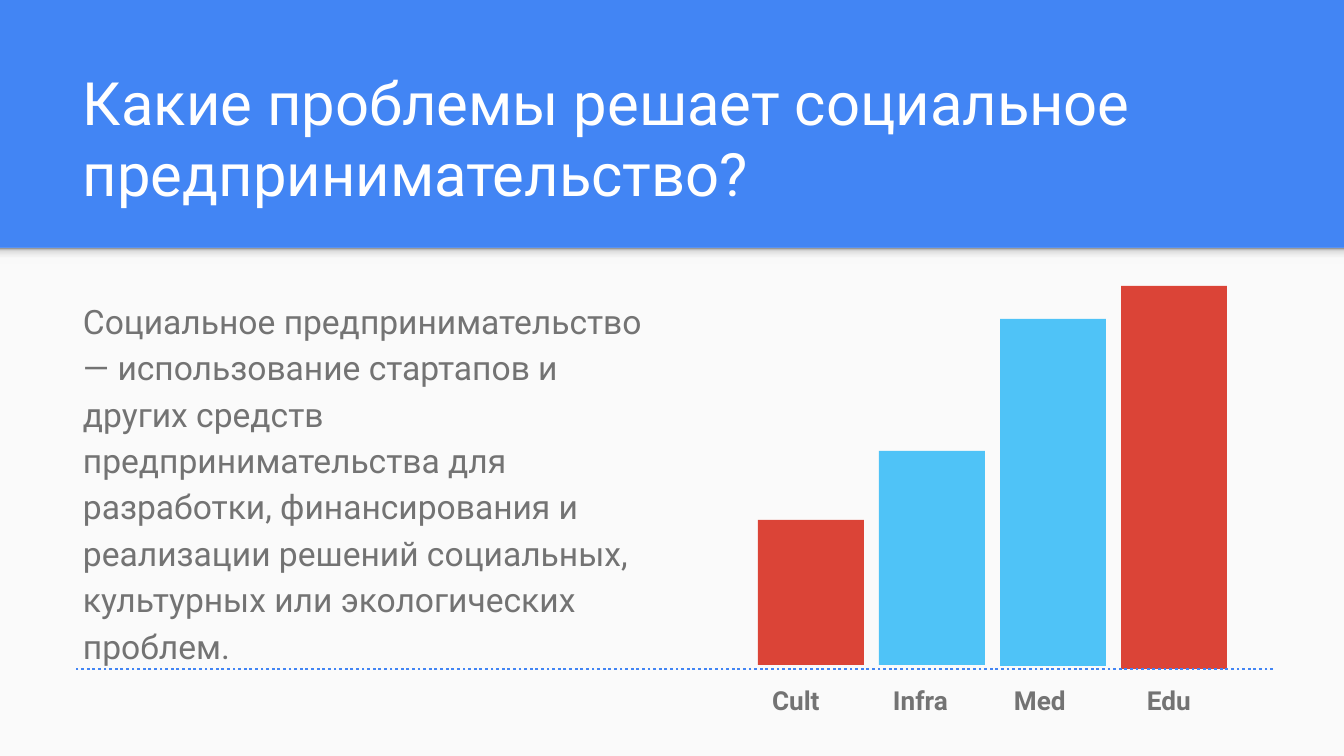
from copy import deepcopy

from pptx import Presentation
from pptx import util as u
from pptx.dml.color import RGBColor
from pptx.enum import dml, shapes, text
from pptx.oxml.ns import qn
from pptx.oxml.xmlchemy import OxmlElement

PX = 914400 / 134.4
NO_STYLE = "{2D5ABB26-0587-4C30-8999-92F81FD0307C}"
BLUE, RED, SKY = "4285F4", "DB4437", "4FC3F7"
WHITE, PAPER, GREY = "FFFFFF", "FAFAFA", "737373"


def px(*lengths):
    return [u.Emu(round(length * PX)) for length in lengths]


def rgb(value):
    return RGBColor.from_string(value)


class Deck:
    """Holds the font and the current slide, and draws each kind of element."""

    font = "Roboto"
    inset = 13

    def __init__(self, background):
        self.presentation = Presentation()
        self.presentation.slide_width, self.presentation.slide_height = px(1344, 756)
        self.slide = self.presentation.slides.add_slide(self.presentation.slide_layouts[6])
        fill = self.slide.background.fill
        fill.solid()
        fill.fore_color.rgb = rgb(background)

    def style(self, paragraph, size, color, bold=False, spacing=1.0):
        paragraph.font.name = self.font
        paragraph.font.size = u.Pt(size)
        paragraph.font.bold = bold
        paragraph.font.color.rgb = rgb(color)
        paragraph.line_spacing = spacing

    def box(self, *place, color=None):
        rectangle = self.slide.shapes.add_shape(shapes.MSO_SHAPE.RECTANGLE, *px(*place))
        rectangle.shadow.inherit = False
        rectangle.line.fill.background()
        if color:
            rectangle.fill.solid()
            rectangle.fill.fore_color.rgb = rgb(color)
        return rectangle

    def fade(self, *place, stops):
        fill = self.box(*place).fill
        fill.gradient()
        fill.gradient_angle = 90
        first = fill.gradient_stops[0]._gs
        for _ in stops[2:]:
            first.addnext(deepcopy(first))
        for stop, (position, color) in zip(fill.gradient_stops, stops):
            stop.position = position
            stop.color.rgb = rgb(color)

    def words(self, content, *place, size, color, spacing=1.0, anchor=text.MSO_ANCHOR.TOP):
        frame = self.slide.shapes.add_textbox(*px(*place)).text_frame
        frame.word_wrap = True
        frame.vertical_anchor = anchor
        frame.margin_left, frame.margin_top, frame.margin_right, frame.margin_bottom = px(*[self.inset] * 4)
        frame.text = content
        self.style(frame.paragraphs[0], size, color, spacing=spacing)

    def labels(self, names, indents, *place):
        table = self.slide.shapes.add_table(1, len(names), *px(*place)).table
        table.first_row = table.horz_banding = False
        table._tbl.tblPr.find(qn("a:tableStyleId")).text = NO_STYLE
        for cell, name, indent in zip(table.rows[0].cells, names, indents):
            cell.fill.background()
            cell.margin_left, cell.margin_top, cell.margin_right, cell.margin_bottom = px(
                self.inset + indent, self.inset, 0, self.inset)
            cell.text = name
            self.style(cell.text_frame.paragraphs[0], 14, GREY, bold=True, spacing=1.15)

    def dotted(self, *ends, color):
        rule = self.slide.shapes.add_connector(shapes.MSO_CONNECTOR.STRAIGHT, *px(*ends))
        rule.line.color.rgb = rgb(color)
        rule.line.width = u.Pt(1.5)
        rule.line.dash_style = dml.MSO_LINE.ROUND_DOT
        rule._element.spPr.append(OxmlElement("a:effectLst"))


def main():
    deck = Deck(BLUE)
    deck.box(0, 248, 1344, 508, color=PAPER)
    deck.fade(0, 248, 1344, 16,
              stops=[(0, "F9F9F9"), (0.36, "F9F9F9"), (0.8, "DEDEDE"), (1, "999999")])
    deck.words("Какие проблемы решает социальное предпринимательство?",
               70, 109, 1208, 113, size=32, color=WHITE, anchor=text.MSO_ANCHOR.BOTTOM)
    deck.words("Социальное предпринимательство — использование стартапов и других средств "
               "предпринимательства для разработки, финансирования и реализации решений "
               "социальных, культурных или экологических проблем.",
               70, 282, 587, 398, size=18, color=GREY, spacing=1.15)

    step = 121
    deck.labels(["Cult", "Infra", "Med", "Edu"], [13, 13, 13, 25], 746, 669, 4 * step, 35)
    bars = [(520, 665, RED), (451, 665, SKY), (319, 666, SKY), (286, 669, RED)]
    for index, (top, bottom, color) in enumerate(bars):
        deck.box(758 + index * step, top, 106, bottom - top, color=color)
    deck.dotted(1273, 669, 75, 669, color=BLUE)
    deck.presentation.save("out.pptx")


if __name__ == "__main__":
    main()
